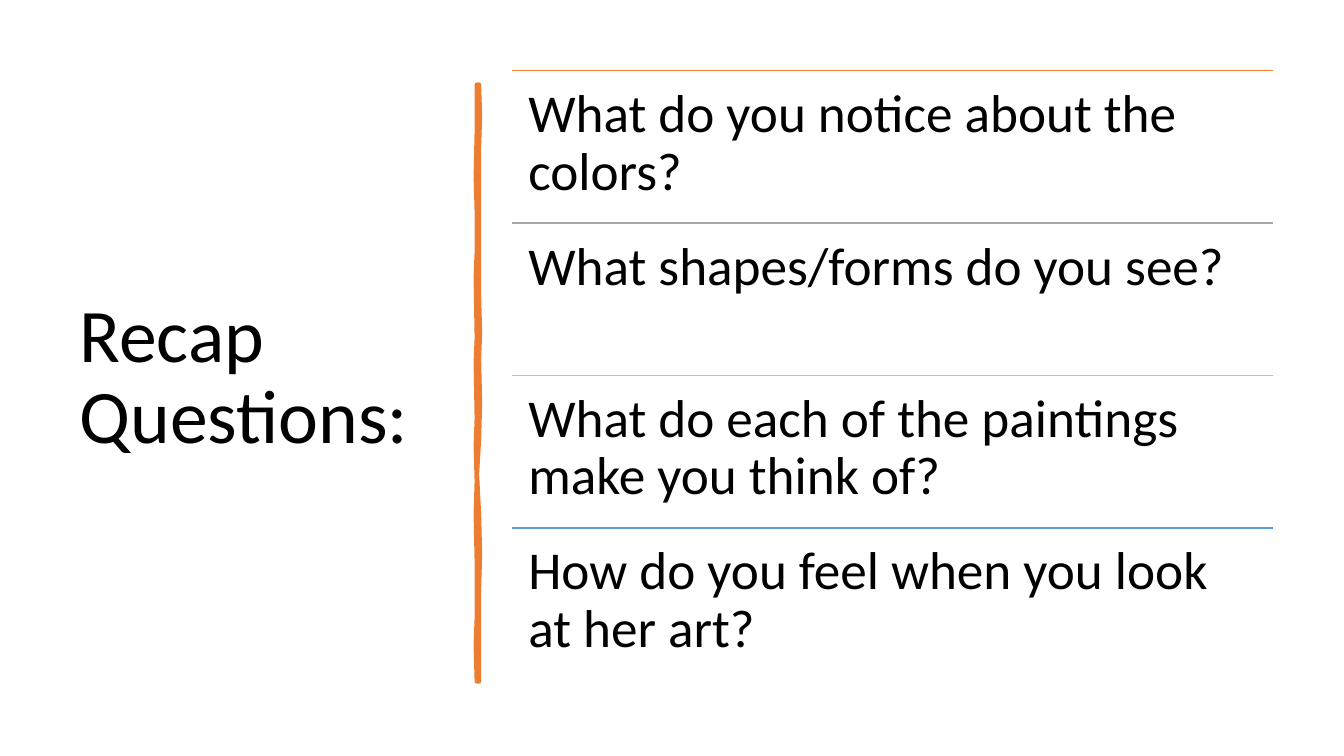
from lxml.etree import SubElement
from pptx import Presentation
from pptx.dml.color import RGBColor
from pptx.enum.shapes import MSO_CONNECTOR
from pptx.enum.text import MSO_ANCHOR, MSO_AUTO_SIZE, PP_ALIGN
from pptx.oxml.ns import qn
from pptx.util import Inches, Pt


def color(hex_string):
    return RGBColor.from_string(hex_string)


def format_text(text_frame, size, anchor):
    text_frame.word_wrap = True
    text_frame.auto_size = MSO_AUTO_SIZE.NONE
    text_frame.vertical_anchor = anchor
    paragraph = text_frame.paragraphs[0]
    paragraph.alignment = PP_ALIGN.LEFT
    paragraph.line_spacing = 0.9
    for run in paragraph.runs:
        run.font.name = "Calibri"
        run.font.size = Pt(size)
        run.font.color.rgb = color("000000")


presentation = Presentation()
presentation.slide_width = Inches(13.33)
presentation.slide_height = Inches(7.5)
slide = presentation.slides.add_slide(presentation.slide_layouts[5])

# Title on the left
title = slide.shapes.title
title.left, title.top = Inches(0.69), Inches(0.7)
title.width, title.height = Inches(3.74), Inches(6.11)
title.text_frame.text = "Recap\vQuestions:"
format_text(title.text_frame, 54, MSO_ANCHOR.MIDDLE)

# Hand-drawn divider: down the right edge, back up the left edge
right_edge = [(4.75, 0.84), (4.76, 1.15), (4.75, 1.46), (4.75, 2.26), (4.75, 2.94),
              (4.76, 3.3), (4.75, 3.56), (4.76, 4.0), (4.75, 4.36), (4.73, 4.7),
              (4.75, 5.1), (4.76, 5.5), (4.75, 5.84), (4.75, 6.76)]
left_edge = [(4.73, 6.76), (4.72, 6.4), (4.73, 6.13), (4.73, 5.57), (4.72, 5.1),
             (4.73, 4.77), (4.72, 4.42), (4.73, 4.15), (4.72, 3.6), (4.73, 3.35),
             (4.72, 2.75), (4.73, 2.5), (4.73, 2.1), (4.72, 1.75), (4.73, 1.3), (4.73, 0.84)]
outline = [(Inches(x), Inches(y)) for x, y in right_edge + left_edge]
builder = slide.shapes.build_freeform(*outline[0])
builder.add_line_segments(outline[1:], close=True)
divider = builder.convert_to_shape()
divider.shadow.inherit = False
divider.fill.solid()
divider.fill.fore_color.rgb = color("ED7D31")
divider.line.color.rgb = color("ED7D31")
divider.line.width = Pt(3.25)
SubElement(divider.line._get_or_add_ln(), qn("a:round"))

# Questions, each under a coloured rule
questions = [
    ("What do you notice about the colors?", "ED7D31"),
    ("What shapes/forms do you see?", "A5A5A5"),
    ("What do each of the paintings make you think of?", "FFC000"),
    ("How do you feel when you look at her art?", "5B9BD5"),
]
left, width = Inches(5.08), Inches(7.55)
first_top, row_height = Inches(0.7), Inches(6.05) // len(questions)

for row, (question, rule_color) in enumerate(questions):
    top = first_top + row * row_height
    rule = slide.shapes.add_connector(MSO_CONNECTOR.STRAIGHT, left, top, left + width, top)
    rule.line.color.rgb = color(rule_color)
    rule.line.width = Pt(1)
    SubElement(rule._element.spPr, qn("a:effectLst"))

    box = slide.shapes.add_textbox(left, top, width, row_height)
    text_frame = box.text_frame
    text_frame.margin_left = text_frame.margin_right = Inches(0.16)
    text_frame.margin_top = text_frame.margin_bottom = Inches(0.16)
    text_frame.text = question
    format_text(text_frame, 38, MSO_ANCHOR.TOP)

presentation.save("out.pptx")
